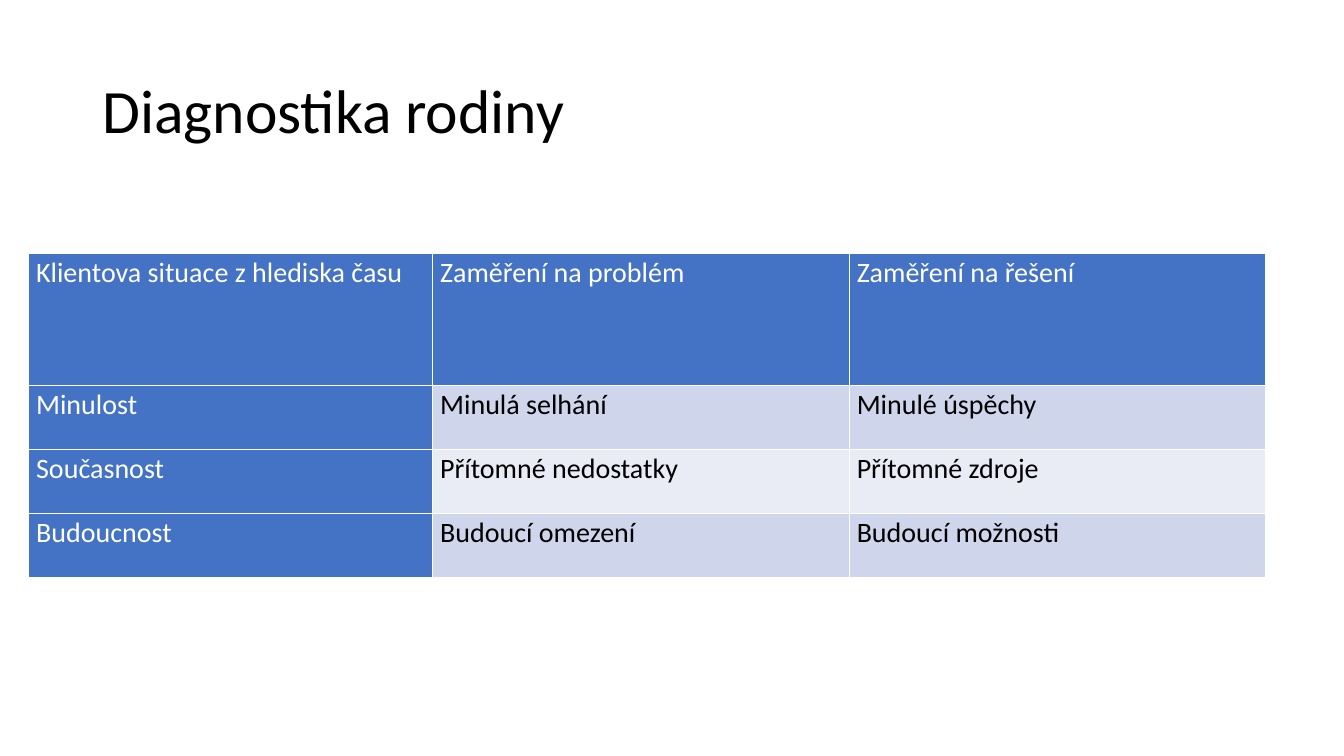
from lxml import etree
from pptx import Presentation
from pptx.dml.color import RGBColor
from pptx.enum import text as t
from pptx.oxml import ns
from pptx.util import Pt

COLOURS = {
    "white": "FFFFFF",
    "black": "000000",
    "heading": "4472C4",
    "band_dark": "CFD5EA",
    "band_light": "E9EBF5",
}
FONT = "Calibri"
COLUMN_WIDTHS = (288.6, 297.6, 297.6)
ROW_HEIGHTS = (94.4, 45.8, 45.8, 45.8)
ROWS = (
    ("Klientova situace z hlediska času", "Zaměření na problém", "Zaměření na řešení"),
    ("Minulost", "Minulá selhání", "Minulé úspěchy"),
    ("Současnost", "Přítomné nedostatky", "Přítomné zdroje"),
    ("Budoucnost", "Budoucí omezení", "Budoucí možnosti"),
)


def colour(name):
    return RGBColor.from_string(COLOURS[name])


def write_text(frame, content, *, size, color, spacing):
    frame.word_wrap = True
    paragraph = frame.paragraphs[0]
    paragraph.line_spacing = spacing
    run = paragraph.add_run()
    run.text = content
    run.font.name = FONT
    run.font.size = Pt(size)
    run.font.bold = False
    run.font.color.rgb = colour(color)


def add_title(slide, content):
    box = slide.shapes.add_textbox(Pt(66), Pt(28.8), Pt(828), Pt(104.4))
    box.text_frame.vertical_anchor = t.MSO_ANCHOR.MIDDLE
    write_text(box.text_frame, content, size=44, color="black", spacing=0.9)


def add_borders(cell, name, width):
    properties = cell._tc.get_or_add_tcPr()
    for index, side in enumerate(("lnL", "lnR", "lnT", "lnB")):
        line = etree.Element(ns.qn(f"a:{side}"), w=str(Pt(width)))
        fill = etree.SubElement(line, ns.qn("a:solidFill"))
        etree.SubElement(fill, ns.qn("a:srgbClr"), val=COLOURS[name])
        properties.insert(index, line)


def format_cell(cell, content, *, fill, color):
    cell.margin_left = cell.margin_right = Pt(5.4)
    cell.margin_top = cell.margin_bottom = Pt(0)
    cell.fill.solid()
    cell.fill.fore_color.rgb = colour(fill)
    add_borders(cell, "white", 1)
    write_text(cell.text_frame, content, size=20, color=color, spacing=1.07)


def add_diagnosis_table(slide):
    table = slide.shapes.add_table(
        len(ROWS), len(COLUMN_WIDTHS), Pt(20.4), Pt(180.9),
        Pt(sum(COLUMN_WIDTHS)), Pt(sum(ROW_HEIGHTS)),
    ).table
    table.first_col = True
    for column, width in zip(table.columns, COLUMN_WIDTHS):
        column.width = Pt(width)
    for row, height in zip(table.rows, ROW_HEIGHTS):
        row.height = Pt(height)
    for row_index, contents in enumerate(ROWS):
        band = "band_dark" if row_index % 2 else "band_light"
        for column_index, content in enumerate(contents):
            is_heading = row_index == 0 or column_index == 0
            format_cell(
                table.cell(row_index, column_index), content,
                fill="heading" if is_heading else band,
                color="white" if is_heading else "black",
            )


def main():
    presentation = Presentation()
    presentation.slide_width = Pt(960)
    presentation.slide_height = Pt(540)
    slide = presentation.slides.add_slide(presentation.slide_layouts[6])
    add_title(slide, "Diagnostika rodiny")
    add_diagnosis_table(slide)
    presentation.save("out.pptx")


if __name__ == "__main__":
    main()
